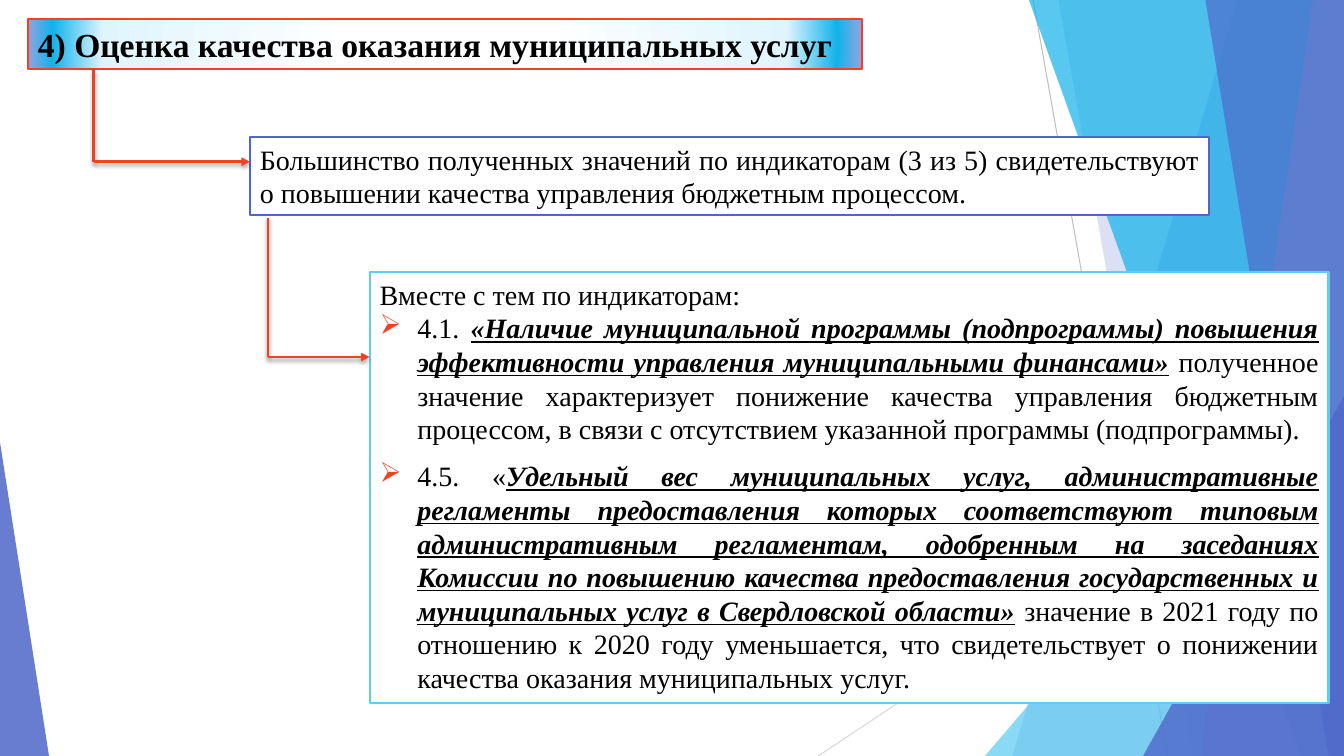
"""Builds a slide on how the quality of municipal services was rated."""
from pptx import Presentation
from pptx.dml.color import RGBColor
from pptx.enum.shapes import MSO_CONNECTOR as Connector, MSO_SHAPE as Shape
from pptx.enum.text import MSO_ANCHOR as Anchor, MSO_AUTO_SIZE as AutoSize, PP_ALIGN as Align
from pptx.oxml import parse_xml
from pptx.oxml.ns import nsdecls, qn
from pptx.util import Pt

COLOURS = {
    "white": "FFFFFF", "black": "000000", "red": "F14124", "indigo": "4E67C8",
    "sky": "5ECCF3", "azure": "12B2EB", "lavender": "95A4DE", "ice": "DFF5FD",
    "grey": "BFBFBF", "pale": "D9D9D9",
}
RGB = {name: RGBColor.from_string(code) for name, code in COLOURS.items()}
WIDTH, HEIGHT = 960, 540


def graft(parent, tag, inner="", attributes=""):
    parent.append(parse_xml(f"<a:{tag} {nsdecls('a')} {attributes}>{inner}</a:{tag}>"))


def draw_line(ends, colour, weight, effect="", arrow=False):
    line = page.shapes.add_connector(Connector.STRAIGHT, *(Pt(value) for value in ends))
    line.line.color.rgb = RGB[colour]
    line.line.width = Pt(weight)
    properties = line.element.spPr
    if arrow:
        graft(properties.find(qn("a:ln")), "tailEnd", attributes='type="triangle"')
    graft(properties, "effectLst", effect)


deck = Presentation()
deck.slide_width, deck.slide_height = Pt(WIDTH), Pt(HEIGHT)
page = deck.slides.add_slide(deck.slide_layouts[6])

draw_line((738, 0, 834, HEIGHT), "grey", 0.75)
draw_line((WIDTH, 290, 584.5, HEIGHT), "pale", 0.75)

facets = [
    ("band", (884, 723), "indigo", 30),
    ("band", (756, 852), "indigo", 20),
    ("triangle", (703.5, 240, 256.5, 300, 1), "sky", 72),
    ("band", (735, 929.5), "azure", 70),
    ("band", (938, 858), "lavender", 70),
    ("band", (861, 949), "indigo", 65),
    ("triangle", (816.5, 283, 143.5, 257, 1), "indigo", 80),
    ("triangle", (0, 316, 35, 224, 0), "indigo", 85),
]
for kind, geometry, colour, opacity in facets:
    if kind == "band":
        top, bottom = geometry
        outline = page.shapes.build_freeform(Pt(top), 0)
        outline.add_line_segments([(Pt(x), Pt(y)) for x, y in
                                   ((WIDTH, 0), (WIDTH, HEIGHT), (bottom, HEIGHT))])
        facet = outline.convert_to_shape()
    else:
        *frame, apex = geometry
        facet = page.shapes.add_shape(Shape.ISOSCELES_TRIANGLE, *(Pt(value) for value in frame))
        facet.adjustments[0] = apex
    facet.shadow.inherit = False
    facet.line.fill.background()
    facet.fill.solid()
    facet.fill.fore_color.rgb = RGB[colour]
    tint = facet.element.spPr.find(f"{qn('a:solidFill')}/{qn('a:srgbClr')}")
    graft(tint, "alpha", attributes=f'val="{opacity * 1000}"')

stops = "".join(
    f'<a:gs pos="{place * 1000}"><a:srgbClr val="{COLOURS[colour]}"/></a:gs>'
    for place, colour in ((24, "white"), (82, "ice"), (94, "azure"), (100, "lavender")))
glow = (f'<a:gsLst>{stops}</a:gsLst><a:path path="circle">'
        '<a:fillToRect l="50000" t="50000" r="50000" b="50000"/></a:path>')

plain = {"bold": False, "italic": False, "underline": False}
heading = {"bold": True}
stressed = {"bold": True, "italic": True, "underline": True}
boxes = [
    ((20, 13.5, 595.5, 36), "red", 24, Align.LEFT, [
        (False, 0, [("4) Оценка качества оказания муниципальных услуг", heading)])]),
    ((264, 194.5, 685, 307.5), "sky", 20, Align.JUSTIFY, [
        (False, 0, [("Вместе с тем по индикаторам:", plain)]),
        (True, 0, [
            ("4.1. ", plain),
            ("«Наличие муниципальной программы (подпрограммы) повышения эффективности "
             "управления муниципальными финансами»", stressed),
            (" полученное значение характеризует понижение качества управления бюджетным "
             "процессом, в связи с отсутствием указанной программы (подпрограммы).", plain)]),
        (True, 9.6, [
            ("4.5. «", plain),
            ("Удельный вес муниципальных услуг, административные регламенты предоставления "
             "которых соответствуют типовым административным регламентам, одобренным на "
             "заседаниях Комиссии по повышению качества предоставления государственных и "
             "муниципальных услуг в Свердловской области»", stressed),
            (" значение в 2021 году по отношению к 2020 году уменьшается, что "
             "свидетельствует о понижении качества оказания муниципальных услуг.", plain)])]),
    ((178.5, 98, 685, 55.5), "indigo", 20, Align.JUSTIFY, [
        (False, 0, [("Большинство полученных значений по индикаторам (3 из 5) свидетельствуют "
                     "о повышении качества управления бюджетным процессом.", plain)])]),
]
for frame, border, size, alignment, paragraphs in boxes:
    box = page.shapes.add_shape(Shape.RECTANGLE, *(Pt(value) for value in frame))
    if border == "red":
        graft(box.element.spPr, "gradFill", glow, 'rotWithShape="1"')
    else:
        box.fill.solid()
        box.fill.fore_color.rgb = RGB["white"]
    box.shadow.inherit = False
    box.line.color.rgb = RGB[border]
    box.line.width = Pt(1.5)
    layout = {"word_wrap": True, "auto_size": AutoSize.SHAPE_TO_FIT_TEXT,
              "vertical_anchor": Anchor.TOP}
    for name, value in layout.items():
        setattr(box.text_frame, name, value)
    for number, (bulleted, gap, spans) in enumerate(paragraphs):
        para = box.text_frame.add_paragraph() if number else box.text_frame.paragraphs[0]
        para.alignment = alignment
        para.space_before = Pt(gap)
        if bulleted:
            marks = para._p.get_or_add_pPr()
            marks.set("marL", str(Pt(27)))
            marks.set("indent", str(Pt(-27)))
            graft(marks, "buClr", f'<a:srgbClr val="{COLOURS["red"]}"/>')
            graft(marks, "buChar", attributes='char="➢"')
        for wording, style in spans:
            span = para.add_run()
            span.text = wording
            for name, value in {"name": "Times New Roman", "size": Pt(size), **style}.items():
                setattr(span.font, name, value)
            span.font.color.rgb = RGB["black"]

shade = (f'<a:outerShdw blurRad="{Pt(3)}" dist="{Pt(2)}" dir="5400000" rotWithShape="0">'
         f'<a:srgbClr val="{COLOURS["black"]}"><a:alpha val="35000"/></a:srgbClr></a:outerShdw>')
for x, top, bottom, target in ((67, 50, 115.5, 178.5), (191.5, 155.5, 255, 264)):
    draw_line((x, top, x, bottom), "red", 2, shade)
    draw_line((x, bottom, target, bottom), "red", 2, shade, arrow=True)

deck.save("out.pptx")
